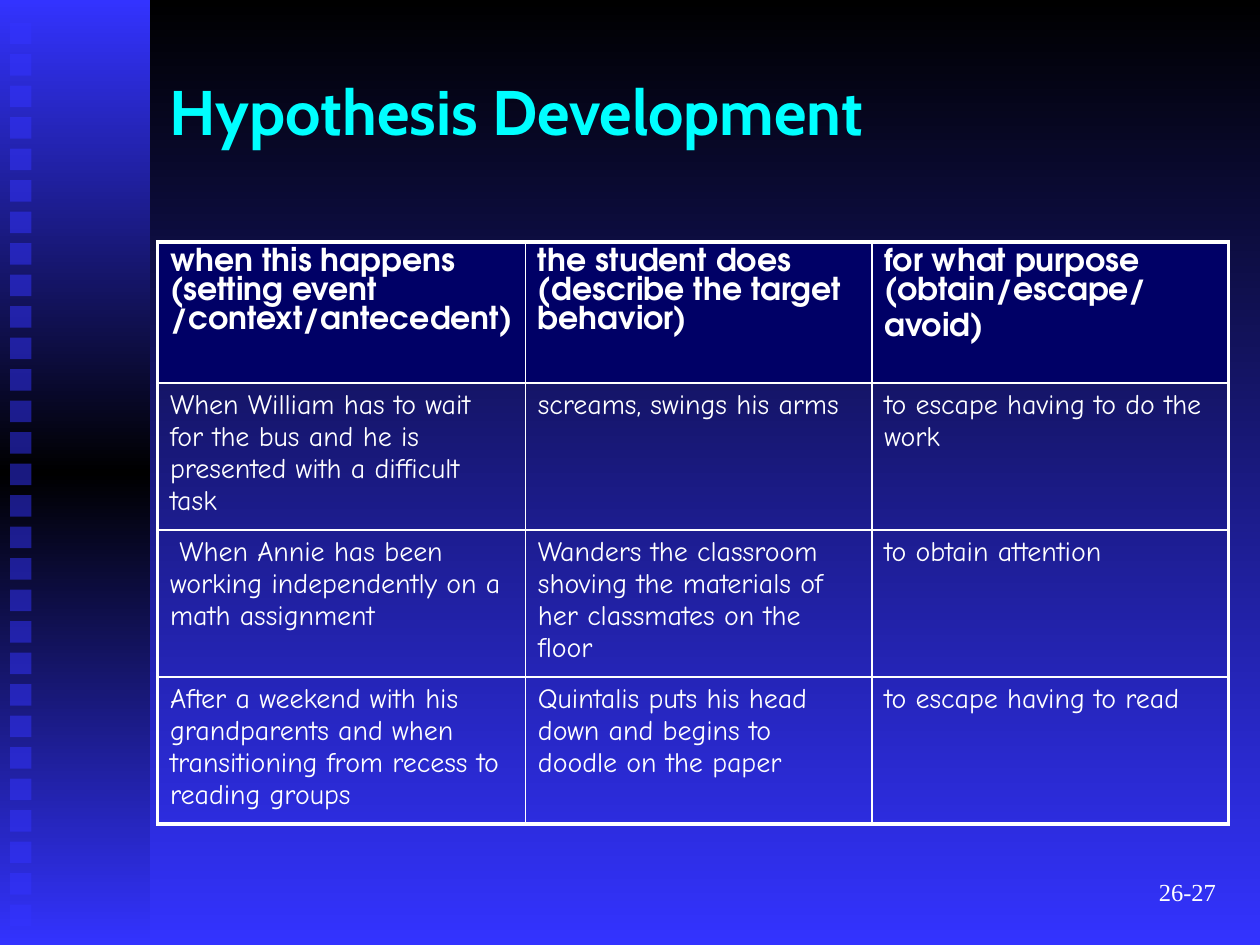
from lxml import etree
from pptx import Presentation
from pptx.dml.color import RGBColor
from pptx.enum import shapes, text
from pptx.oxml.ns import qn
from pptx.util import Inches, Pt

TITLE = "Hypothesis Development"
PAGE = "26-27"

# Each cell is a list of paragraphs; the first row is the header
ROWS = [
    [["when this happens (setting event /context/antecedent)"],
     ["the student does (describe the target behavior)"],
     ["for what purpose (obtain/escape/", "avoid)"]],
    [["When William has to wait for the bus and he is presented with a difficult task"],
     ["screams, swings his arms"],
     ["to escape having to do the work"]],
    [["\N{NO-BREAK SPACE}When Annie has been working independently on a math assignment"],
     ["Wanders the classroom shoving the materials of her classmates on the floor"],
     ["to obtain attention"]],
    [["After a weekend with his grandparents and when transitioning from recess to reading groups"],
     ["Quintalis puts his head down and begins to doodle on the paper"],
     ["to escape having to read"]],
]
COLUMN_WIDTHS = [2.92, 2.75, 2.83]
ROW_HEIGHT = 1.12

BLACK, BLUE, NAVY, CYAN, WHITE = "000000", "3333FF", "000066", "00FFFF", "FFFFFF"
SQUARES, SQUARE_SIZE, SQUARE_STEP = 29, 0.17, 0.25
INNER_LINE, OUTER_LINE = 1, 2.25


def rgb(value):
    return RGBColor.from_string(value)


def add_node(parent, tag, **attributes):
    return etree.SubElement(parent, qn(tag), attributes)


def fill_gradient(fill, element, colors):
    """Spread the colors evenly from top to bottom."""
    fill.gradient()
    fill.gradient_angle = 270
    stops = element.find(".//" + qn("a:gsLst"))
    for stop in list(stops):
        stops.remove(stop)
    for i, color in enumerate(colors):
        stop = add_node(stops, "a:gs", pos=str(100000 * i // (len(colors) - 1)))
        add_node(stop, "a:srgbClr", val=color)


def add_rectangle(left, top, width, height):
    rectangle = slide.shapes.add_shape(
        shapes.MSO_SHAPE.RECTANGLE, Inches(left), Inches(top), Inches(width), Inches(height))
    rectangle.shadow.inherit = False
    rectangle.line.fill.background()
    return rectangle


def add_run(paragraph, words, font, size, color, bold=False):
    run = paragraph.add_run()
    run.text = words
    run.font.name, run.font.size, run.font.bold = font, Pt(size), bold
    run.font.color.rgb = rgb(color)


def add_label(box, words, align, *style):
    label = slide.shapes.add_textbox(*map(Inches, box)).text_frame
    label.word_wrap = True
    label.vertical_anchor = text.MSO_ANCHOR.MIDDLE
    label.paragraphs[0].alignment = align
    add_run(label.paragraphs[0], words, *style)


def add_borders(cell, row, column):
    """Thick lines on the table's outer edge, thin ones inside."""
    outer = {"a:lnL": column == 0, "a:lnR": column == len(COLUMN_WIDTHS) - 1,
             "a:lnT": row == 0, "a:lnB": row == len(ROWS) - 1}
    properties = cell._tc.get_or_add_tcPr()
    for tag, is_outer in outer.items():
        width = Pt(OUTER_LINE if is_outer else INNER_LINE)
        line = add_node(properties, tag, w=str(width))
        add_node(add_node(line, "a:solidFill"), "a:srgbClr", val=WHITE)


prs = Presentation()
prs.slide_width, prs.slide_height = Inches(10), Inches(7.5)
slide = prs.slides.add_slide(prs.slide_layouts[6])

# Background and side band
fill_gradient(slide.background.fill, slide.background._cSld, [BLACK, BLUE])
band = add_rectangle(0, 0, 1.19, 7.5)
fill_gradient(band.fill, band._element, [BLUE, BLACK, BLUE])

# Column of translucent squares
for i in range(SQUARES):
    square = add_rectangle(0.08, 0.18 + i * SQUARE_STEP, SQUARE_SIZE, SQUARE_SIZE)
    square.fill.solid()
    square.fill.fore_color.rgb = rgb(BLUE)
    color_node = square._element.spPr.find(qn("a:solidFill"))[0]
    add_node(color_node, "a:alpha", val="50000")

# Title
add_label((1.25, 0.25, 8.5, 1.25), TITLE, text.PP_ALIGN.LEFT, "Cabin", 36, CYAN, True)

# Table
table = slide.shapes.add_table(
    len(ROWS), len(COLUMN_WIDTHS), Inches(1.25), Inches(1.92),
    Inches(sum(COLUMN_WIDTHS)), Inches(ROW_HEIGHT * len(ROWS))).table
table.first_row = table.horz_banding = False
for column, width in enumerate(COLUMN_WIDTHS):
    table.columns[column].width = Inches(width)

for r, row in enumerate(ROWS):
    table.rows[r].height = Inches(ROW_HEIGHT)
    is_header = r == 0
    style = ("TeX Gyre Adventor", 18, WHITE, True) if is_header else ("Comic Neue", 16, WHITE)
    for c, paragraphs in enumerate(row):
        cell = table.cell(r, c)
        add_borders(cell, r, c)
        if is_header:
            cell.fill.solid()
            cell.fill.fore_color.rgb = rgb(NAVY)
        else:
            cell.fill.background()
        for i, words in enumerate(paragraphs):
            frame = cell.text_frame
            paragraph = frame.add_paragraph() if i else frame.paragraphs[0]
            before = add_node(paragraph._p.get_or_add_pPr(), "a:spcBef")
            add_node(before, "a:spcPct", val="20000")
            add_run(paragraph, words, *style)

# Page number
add_label((7.67, 6.83, 2.08, 0.5), PAGE, text.PP_ALIGN.RIGHT, "Times New Roman", 14, WHITE)

prs.save("out.pptx")
